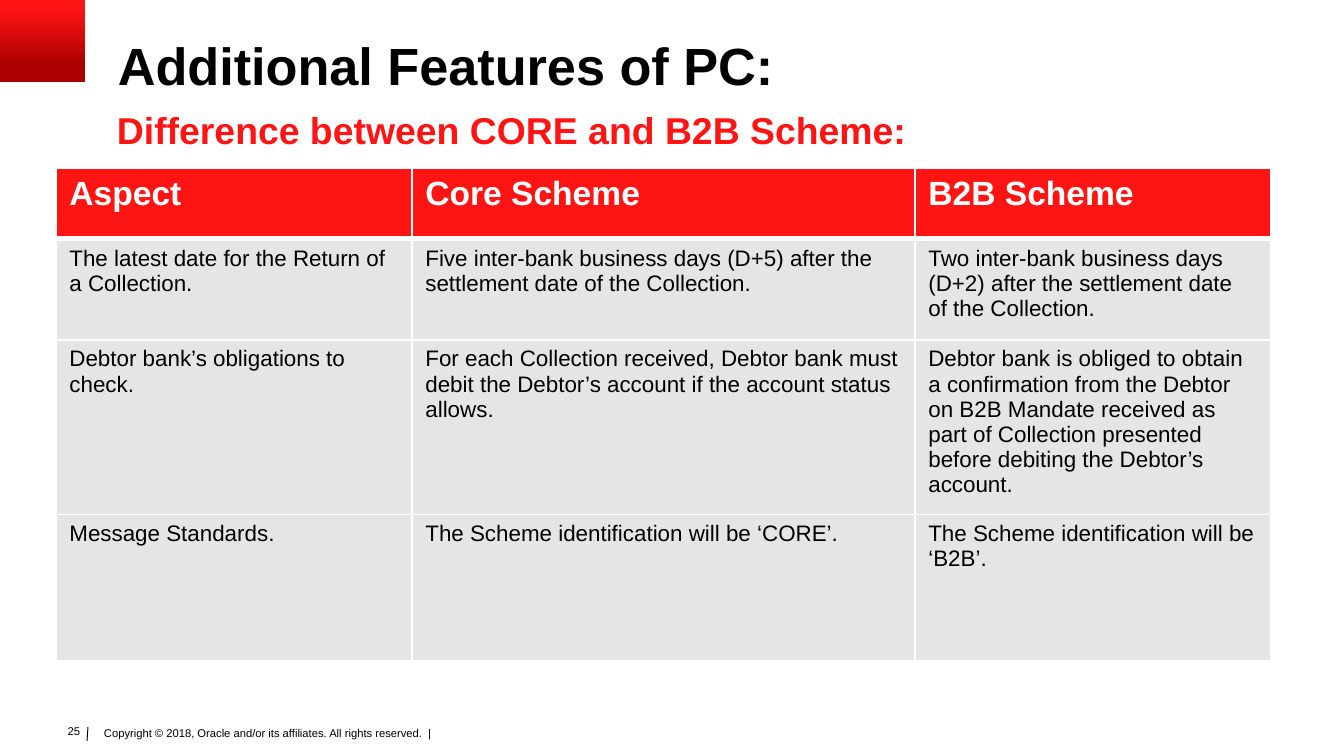
from lxml.etree import SubElement
from pptx import Presentation
from pptx.dml.color import RGBColor as RGB
from pptx.enum.shapes import MSO_CONNECTOR as Connector, MSO_SHAPE as Shape
from pptx.enum.text import MSO_ANCHOR as Anchor, PP_ALIGN as Align
from pptx.oxml import parse_xml
from pptx.oxml.ns import nsdecls, qn
from pptx.util import Emu, Pt

COLORS = {
    "black": "000000",
    "white": "FFFFFF",
    "red": "FF1414",
    "dark_red": "AA0000",
    "gray": "E5E5E5",
}
ROWS = [
    ["Aspect", "Core Scheme", "B2B Scheme"],
    [
        "The latest date for the Return of a Collection.",
        "Five inter-bank business days (D+5) after the settlement date of the Collection.",
        "Two inter-bank business days (D+2) after the settlement date of the Collection.",
    ],
    [
        "Debtor bank’s obligations to check.",
        "For each Collection received, Debtor bank must debit the Debtor’s account "
        "if the account status allows.",
        "Debtor bank is obliged to obtain a confirmation from the Debtor on B2B Mandate "
        "received as part of Collection presented before debiting the Debtor’s account.",
    ],
    [
        "Message Standards.",
        "The Scheme identification will be ‘CORE’.",
        "The Scheme identification will be ‘B2B’.",
    ],
]


def px(value):
    return Emu(round(value * 914400 / 134.4))


def color(name):
    return RGB.from_string(COLORS[name])


class SlideBuilder:
    """Draws styled elements on the current slide, with lengths in px."""

    font = "Arial"

    def __init__(self, slide):
        self.slide = slide
        self.shapes = slide.shapes

    def style(self, paragraph, size, tint, bold=False):
        for run in paragraph.runs:
            run.font.name = self.font
            run.font.size = Pt(size)
            run.font.bold = bold
            run.font.color.rgb = color(tint)

    def text(self, box, words, size, tint="black", bold=False, insets=(0, 0, 0, 0),
             anchor=Anchor.TOP, align=Align.LEFT, spacing=None):
        frame = self.shapes.add_textbox(*map(px, box)).text_frame
        frame.word_wrap = True
        frame.vertical_anchor = anchor
        frame.margin_left, frame.margin_top, frame.margin_right, frame.margin_bottom = map(px, insets)
        frame.text = words
        paragraph = frame.paragraphs[0]
        paragraph.alignment = align
        if spacing:
            paragraph.line_spacing = spacing
        self.style(paragraph, size, tint, bold)

    def gradient(self, box, stops, angle):
        block = self.shapes.add_shape(Shape.RECTANGLE, *map(px, box))
        block.shadow.inherit = False
        block.line.fill.background()
        block.fill.gradient()
        block.fill.gradient_angle = angle
        for stop, (position, tint) in zip(block.fill.gradient_stops, stops):
            stop.position = position
            stop.color.rgb = color(tint)

    def line(self, ends, tint, width):
        divider = self.shapes.add_connector(Connector.STRAIGHT, *map(px, ends))
        divider.line.color.rgb = color(tint)
        divider.line.width = Pt(width)
        SubElement(divider._element.spPr, qn("a:effectLst"))

    def borders(self, cell, tint, widths):
        properties = cell._tc.get_or_add_tcPr()
        for index, (side, width) in enumerate(zip("LRTB", widths)):
            properties.insert(index, parse_xml(
                f'<a:ln{side} {nsdecls("a")} w="{Pt(width)}"><a:solidFill>'
                f'<a:srgbClr val="{COLORS[tint]}"/></a:solidFill></a:ln{side}>'))

    def table(self, left, top, widths, heights, rows):
        box = (left, top, sum(widths), sum(heights))
        grid = self.shapes.add_table(len(rows), len(widths), *map(px, box)).table
        for column, width in zip(grid.columns, widths):
            column.width = px(width)
        for row, height in zip(grid.rows, heights):
            row.height = px(height)
        for r, row in enumerate(rows):
            header = r == 0
            for c, words in enumerate(row):
                cell = grid.cell(r, c)
                cell.fill.solid()
                cell.fill.fore_color.rgb = color("red" if header else "gray")
                cell.text_frame.text = words
                self.style(cell.text_frame.paragraphs[0], 18 if header else 12,
                           "white" if header else "black", header)
                self.borders(cell, "white", (1, 1, 3 if r == 1 else 1, 3 if header else 1))


def main():
    deck = Presentation()
    deck.slide_width, deck.slide_height = px(1344), px(756)
    page = SlideBuilder(deck.slides.add_slide(deck.slide_layouts[6]))
    page.text((99, 723, 878, 32),
              "Copyright © 2018, Oracle and/or its affiliates. All rights reserved.  |",
              6, insets=(5, 3, 5, 3))
    page.line((88, 727, 87, 741), "black", 0.5)
    page.text((52, 718, 41, 27), "25", 6, insets=(0, 7, 13, 7), align=Align.RIGHT)
    page.gradient((0, 0, 85, 82), [(0.2, "dark_red"), (0.9, "red")], 90)
    page.text((118, 36, 1210, 65), "Additional Features of PC:", 28, bold=True,
              anchor=Anchor.MIDDLE, spacing=0.9)
    page.table(56, 168, (356, 503, 356), (71, 101, 173, 146), ROWS)
    page.text((117, 108, 1210, 44), "Difference between CORE and B2B Scheme:", 20,
              "red", bold=True, anchor=Anchor.MIDDLE)
    deck.save("out.pptx")


if __name__ == "__main__":
    main()
